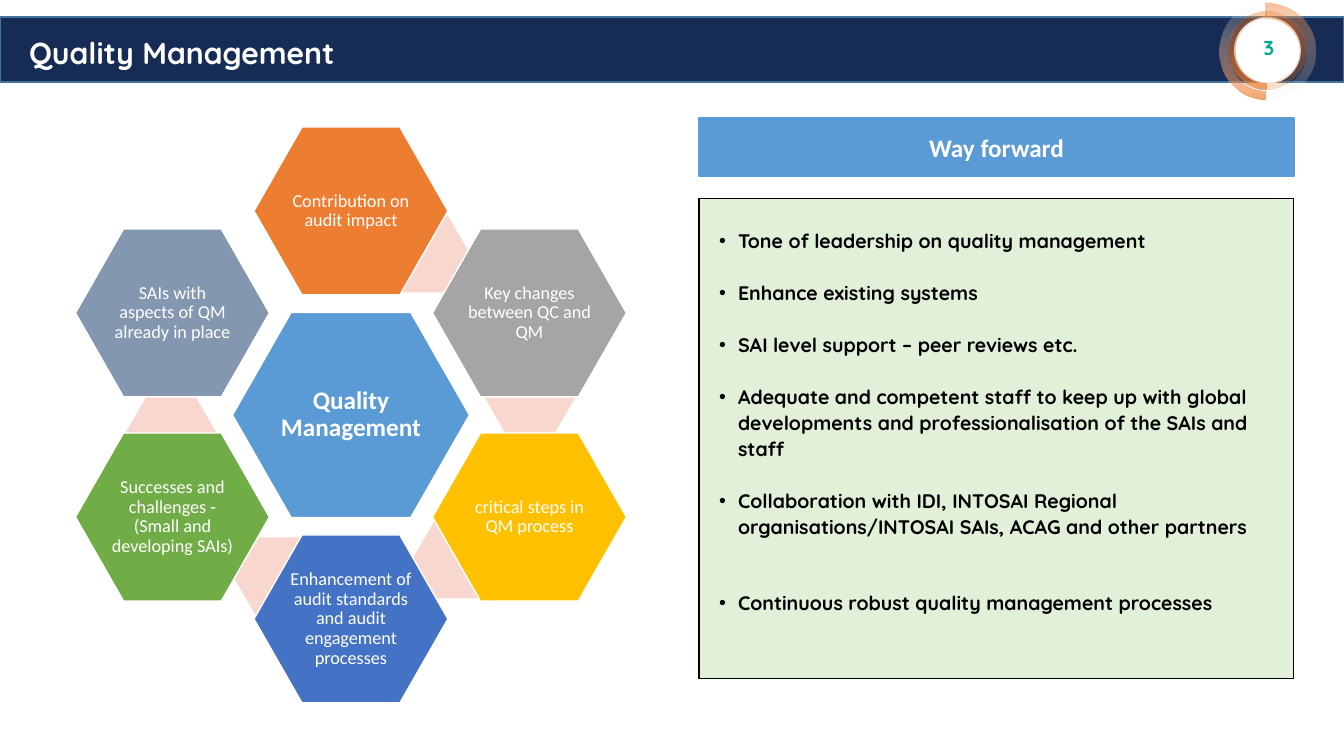
import pptx
import pptx.dml.color
import pptx.enum.shapes
import pptx.enum.text
import pptx.oxml.ns
import pptx.util
from lxml import etree

EMU_PER_PX = 914400 / 100.8
SHAPES = pptx.enum.shapes.MSO_SHAPE
ALIGN = pptx.enum.text.PP_ALIGN
ANCHOR = pptx.enum.text.MSO_ANCHOR
NAVY, BLUE, ORANGE, PALE, WHITE = "172C54", "5B9BD5", "ED7D31", "F7FAFD", "FFFFFF"

# label, fill, column and row offset in steps, bridge to the next petal in px
PETALS = [
    ("Contribution on audit impact", ORANGE, (0, -2), (74, -161)),
    ("Key changes between QC and QM", "A5A5A5", (1, -1), (179, -17)),
    ("critical steps in QM process", "FFC000", (1, 1), (106, 145)),
    ("Enhancement of audit standards and audit engagement processes",
     "4472C4", (0, 2), (-73, 161)),
    ("Successes and challenges - (Small and developing SAIs)",
     "70AD47", (-1, 1), (-180, 17)),
    ("SAIs with aspects of QM already in place", "8497B0", (-1, -1), None),
]

# bullet text, space before in px
ACTIONS = [
    ("Tone of leadership on quality management", 0),
    ("Enhance existing systems", 26),
    ("SAI level support – peer reviews etc.", 26),
    ("Adequate and competent staff to keep up with global developments "
     "and professionalisation of the SAIs and staff", 26),
    ("Collaboration with IDI, INTOSAI Regional organisations/INTOSAI SAIs, "
     "ACAG and other partners", 26),
    ("Continuous robust quality management processes", 51),
]


def px(length):
    return pptx.util.Emu(round(length * EMU_PER_PX))


def rgb(colour):
    return pptx.dml.color.RGBColor.from_string(colour)


def qn(tag):
    return pptx.oxml.ns.qn(tag)


def place(shape, box):
    shape.left, shape.top, shape.width, shape.height = map(px, box)


def paint(shape, fill, line=None, weight=1):
    shape.fill.solid()
    shape.fill.fore_color.rgb = rgb(fill)
    if line:
        shape.line.color.rgb = rgb(line)
        shape.line.width = pptx.util.Pt(weight)
    else:
        shape.line.fill.background()


def add_block(slide, kind, box, fill, line=None):
    block = slide.shapes.add_shape(kind, *map(px, box))
    block.shadow.inherit = False
    paint(block, fill, line)
    return block


def set_frame(shape, anchor, margins=(10, 5, 10, 5)):
    frame = shape.text_frame
    frame.word_wrap = True
    frame.auto_size = pptx.enum.text.MSO_AUTO_SIZE.NONE
    frame.vertical_anchor = anchor
    (frame.margin_left, frame.margin_top,
     frame.margin_right, frame.margin_bottom) = map(px, margins)
    return frame


def style(paragraph, size, font, colour, bold=False, align=ALIGN.CENTER, spacing=1.0):
    paragraph.alignment = align
    paragraph.line_spacing = spacing
    for run in paragraph.runs:
        run.font.size = pptx.util.Pt(size)
        run.font.name = font
        run.font.bold = bold
        run.font.color.rgb = rgb(colour)


def bend(segment, radii, start, sweep):
    """Turn a straight segment into an elliptical arc; angles in degrees."""
    arc = etree.Element(qn("a:arcTo"))
    values = (px(radii[0]), px(radii[1]), start * 60000, sweep * 60000)
    for key, value in zip(("wR", "hR", "stAng", "swAng"), values):
        arc.set(key, str(value))
    segment.getparent().replace(segment, arc)


def add_half_ring(slide, centre, radii, side, stops):
    """Half of a ring; side is 1 for the right half and -1 for the left."""
    x, y = centre
    outer, inner = [(radius + 1.5 * side, radius) for radius in radii]
    points = [(x, y - outer[1]), (x + side * outer[0], y), (x, y + outer[1]),
              (x, y + inner[1]), (x + side * inner[0], y), (x, y - inner[1])]
    corners = [(px(across), px(down)) for across, down in points]
    builder = slide.shapes.build_freeform(*corners[0], scale=1.0)
    builder.add_line_segments(corners[1:], close=True)
    half = builder.convert_to_shape()
    half.shadow.inherit = False
    half.line.fill.background()

    segments = list(half.element.iter(qn("a:lnTo")))
    flank = 0 if side > 0 else 180
    bend(segments[0], outer, 270, 90 * side)
    bend(segments[1], outer, flank, 90 * side)
    bend(segments[3], inner, 90, -90 * side)
    bend(segments[4], inner, flank, -90 * side)

    half.fill.gradient()
    half.fill.gradient_angle = 270
    for stop, (position, colour, _) in zip(half.fill.gradient_stops, stops):
        stop.position = position
        stop.color.rgb = rgb(colour)
    tones = half.element.spPr.iter(qn("a:srgbClr"))
    for tone, (_, _, opacity) in zip(tones, stops):
        etree.SubElement(tone, qn("a:alpha")).set("val", str(opacity * 1000))


def add_page_badge(slide, box, number):
    left, top, width, height = box
    centre = (left + 46, top + height / 2)
    add_block(slide, SHAPES.OVAL, (left + 14, top + 14, 67, 67), WHITE)
    label = slide.shapes.add_textbox(*map(px, (left + 16, top + 27, 66, 34)))
    digits = set_frame(label, ANCHOR.TOP).paragraphs[0]
    digits.text = number
    style(digits, 14.4, "Quicksand", "00A88E", bold=True)
    inner_ring, outer_ring = (39, 32), (48, 39)
    add_half_ring(slide, centre, inner_ring, 1, [(0, ORANGE, 60), (0.91, ORANGE, 25)])
    add_half_ring(slide, centre, inner_ring, -1, [(0.17, ORANGE, 41), (1, ORANGE, 76)])
    add_half_ring(slide, centre, outer_ring, 1, [(0, ORANGE, 50), (1, PALE, 13)])
    add_half_ring(slide, centre, outer_ring, -1, [(0, PALE, 13), (1, ORANGE, 71)])


def add_header(slide, box, heading):
    left, top, width, height = box
    add_block(slide, SHAPES.RECTANGLE, box, NAVY, "43739E")
    add_page_badge(slide, (left + 1220, top - 14, 96, 96), "3")
    title = slide.shapes.title
    title.element.getparent().append(title.element)  # in front of the band
    place(title, (left + 19, top + 11, 1151, 53))
    words = set_frame(title, ANCHOR.MIDDLE).paragraphs[0]
    words.text = heading
    style(words, 21.6, "Quicksand", WHITE, bold=True, align=ALIGN.LEFT, spacing=0.9)


def add_hexagon(slide, centre, size, fill, line=None, adjust=0.286):
    (x, y), (width, height) = centre, size
    hexagon = add_block(slide, SHAPES.HEXAGON,
                        (x - width / 2, y - height / 2, width, height), fill, line)
    hexagon.adjustments[0] = adjust
    hexagon.adjustments[1] = 1.1547
    return hexagon


def label_hexagon(hexagon, label, size, bold=False):
    words = set_frame(hexagon, ANCHOR.MIDDLE, (3, 3, 3, 3)).paragraphs[0]
    words.text = label
    style(words, size, "Calibri", WHITE, bold=bold, spacing=0.9)


def add_flower(slide, box, heading):
    left, top, width, height = box
    x, y = left + width / 2, top + height / 2
    core = add_hexagon(slide, (x, y), (237, 205), BLUE, WHITE)
    label_hexagon(core, heading, 18, bold=True)
    column, row = 178.5, 102
    for label, fill, (across, down), bridge in PETALS:
        if bridge:
            add_hexagon(slide, (x + bridge[0], y + bridge[1]), (90, 77),
                        "F8D7CE", adjust=0.289)
        petal = add_hexagon(slide, (x + across * column, y + down * row),
                            (194, 168), fill, WHITE)
        label_hexagon(petal, label, 13)


def add_way_forward(slide, box):
    left, top, width, height = box
    banner = add_block(slide, SHAPES.RECTANGLE, (left, top, width, 58), BLUE, BLUE)
    words = set_frame(banner, ANCHOR.MIDDLE).paragraphs[0]
    words.text = "Way forward"
    style(words, 18, "Calibri", WHITE, bold=True)

    actions = slide.placeholders[1]
    actions.element.getparent().append(actions.element)
    place(actions, (left, top + 81, width, height - 81))
    paint(actions, "E2F0D9", "000000", 0.75)
    frame = set_frame(actions, ANCHOR.TOP, (10, 28, 10, 5))
    for index, (text, gap) in enumerate(ACTIONS):
        action = frame.add_paragraph() if index else frame.paragraphs[0]
        action.text = text
        properties = action._p.get_or_add_pPr()
        properties.set("marL", str(px(29)))
        properties.set("indent", str(px(-19)))
        for tag, key, value in [("a:buFont", "typeface", "Arial"), ("a:buChar", "char", "•")]:
            etree.SubElement(properties, qn(tag)).set(key, value)
        style(action, 14, "Quicksand", "000000", bold=True, align=ALIGN.LEFT, spacing=1.1)
        action.space_before = px(gap)
        action.space_after = px(0)


def main():
    deck = pptx.Presentation()
    deck.slide_width, deck.slide_height = px(1344), px(756)
    slide = deck.slides.add_slide(deck.slide_layouts[1])
    add_header(slide, (0, 17, 1344, 65), "Quality Management")
    add_flower(slide, (75, 126, 552, 578), "Quality Management")
    add_way_forward(slide, (699, 118, 595, 561))
    deck.save("out.pptx")


if __name__ == "__main__":
    main()
